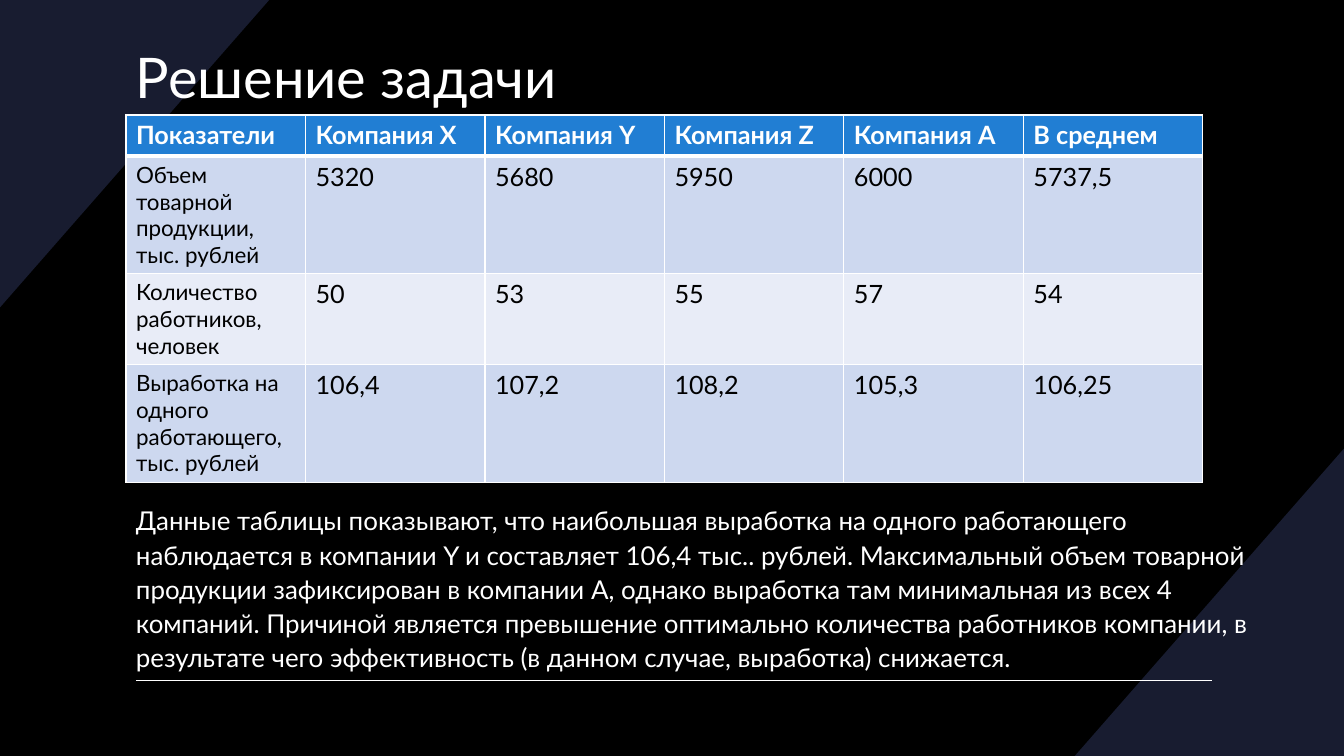
"""Build the "Решение задачи" slide with its table of indicators and conclusion."""
from dataclasses import dataclass

from lxml.etree import SubElement
from pptx import Presentation
from pptx.dml.color import RGBColor
from pptx.enum.shapes import MSO_CONNECTOR as Connector
from pptx.enum.text import MSO_ANCHOR as Anchor
from pptx.oxml.ns import qn
from pptx.util import Inches, Pt

FONT = "Lato"
COLORS = {
    "background": "000000",
    "corner": "181C30",
    "light": "FFFFFF",
    "dark": "000000",
    "header": "217ED3",
    "odd_row": "CDD8EF",
    "even_row": "E8ECF7",
}
WIDTH, HEIGHT = 13.33, 7.5
CORNER_WIDTH, CORNER_HEIGHT = 2.67, 3.05
COLUMN_WIDTH = 1.78
THIN, THICK = 1, 3


@dataclass
class Corner:
    points: list[tuple[float, float]]


@dataclass
class TextBlock:
    text: str
    left: float
    top: float
    width: float
    height: float
    size: float
    anchor: Anchor = Anchor.TOP
    line_spacing: float = 1.0
    space_before: float = 0


@dataclass
class TableRow:
    height: float
    fill: str
    values: list[str]
    label_size: float = 16
    color: str = "dark"
    bold: bool = False
    top_border: int = THIN
    bottom_border: int = THIN


CORNERS = [
    Corner([(WIDTH, HEIGHT - CORNER_HEIGHT), (WIDTH, HEIGHT), (WIDTH - CORNER_WIDTH, HEIGHT)]),
    Corner([(0, CORNER_HEIGHT), (0, 0), (CORNER_WIDTH, 0)]),
]
TEXT_BLOCKS = [
    TextBlock("Решение задачи", 1.25, 0.01, 10.83, 1.49, 40, anchor=Anchor.MIDDLE),
    TextBlock(
        "Данные таблицы показывают, что наибольшая выработка на одного работающего "
        "наблюдается в компании Y и составляет 106,4 тыс.. рублей. Максимальный объем "
        "товарной продукции зафиксирован в компании A, однако выработка там минимальная "
        "из всех 4 компаний. Причиной является превышение оптимально количества "
        "работников компании, в результате чего эффективность (в данном случае, "
        "выработка) снижается.",
        1.25, 4.93, 11.51, 1.97, 18.5, line_spacing=1.1, space_before=10,
    ),
]
TABLE_ROWS = [
    TableRow(
        0.41, "header",
        ["Показатели", "Компания X", "Компания Y", "Компания Z", "Компания А", "В среднем"],
        label_size=18, color="light", bold=True, bottom_border=THICK,
    ),
    TableRow(
        1.16, "odd_row",
        ["Объем товарной продукции, тыс. рублей", "5320", "5680", "5950", "6000", "5737,5"],
        top_border=THICK,
    ),
    TableRow(0.9, "even_row", ["Количество работников, человек", "50", "53", "55", "57", "54"]),
    TableRow(
        1.16, "odd_row",
        ["Выработка на одного работающего, тыс. рублей",
         "106,4", "107,2", "108,2", "105,3", "106,25"],
    ),
]


def rgb(name: str) -> RGBColor:
    return RGBColor.from_string(COLORS[name])


def format_runs(paragraph, size: float, color: str, bold: bool = False) -> None:
    for run in paragraph.runs:
        run.font.name = FONT
        run.font.size = Pt(size)
        run.font.bold = bold
        run.font.color.rgb = rgb(color)


def draw_corner(slide, corner: Corner) -> None:
    start, *others = [(Inches(x), Inches(y)) for x, y in corner.points]
    builder = slide.shapes.build_freeform(*start)
    builder.add_line_segments(others, close=True)
    shape = builder.convert_to_shape()
    shape.shadow.inherit = False
    shape.fill.solid()
    shape.fill.fore_color.rgb = rgb("corner")
    shape.line.fill.background()


def draw_footer_line(slide) -> None:
    line = slide.shapes.add_connector(
        Connector.STRAIGHT, Inches(1.35), Inches(6.75), Inches(12.02), Inches(6.75)
    )
    line.line.color.rgb = rgb("light")
    line.line.width = Pt(1)
    SubElement(line._element.spPr, qn("a:effectLst"))


def draw_text(slide, block: TextBlock) -> None:
    shape = slide.shapes.add_textbox(
        Inches(block.left), Inches(block.top), Inches(block.width), Inches(block.height)
    )
    text_frame = shape.text_frame
    text_frame.word_wrap = True
    text_frame.vertical_anchor = block.anchor
    text_frame.text = block.text
    paragraph = text_frame.paragraphs[0]
    paragraph.line_spacing = block.line_spacing
    paragraph.space_before = Pt(block.space_before)
    format_runs(paragraph, block.size, "light")


def set_borders(cell, row: TableRow) -> None:
    properties = cell._tc.get_or_add_tcPr()
    widths = {"lnL": THIN, "lnR": THIN, "lnT": row.top_border, "lnB": row.bottom_border}
    for index, (side, width) in enumerate(widths.items()):
        border = SubElement(properties, qn(f"a:{side}"), w=str(Pt(width)))
        fill = SubElement(border, qn("a:solidFill"))
        SubElement(fill, qn("a:srgbClr"), val=COLORS["light"])
        properties.insert(index, border)


def draw_table(slide, rows: list[TableRow]) -> None:
    column_count = len(rows[0].values)
    table = slide.shapes.add_table(
        len(rows), column_count, Inches(1.25), Inches(1.14),
        Inches(COLUMN_WIDTH * column_count), Inches(sum(row.height for row in rows)),
    ).table
    for column in table.columns:
        column.width = Inches(COLUMN_WIDTH)
    for row_index, row in enumerate(rows):
        table.rows[row_index].height = Inches(row.height)
        for column_index, value in enumerate(row.values):
            cell = table.cell(row_index, column_index)
            cell.fill.solid()
            cell.fill.fore_color.rgb = rgb(row.fill)
            cell.text_frame.text = value
            size = 18 if column_index else row.label_size
            format_runs(cell.text_frame.paragraphs[0], size, row.color, row.bold)
            set_borders(cell, row)


def main() -> None:
    presentation = Presentation()
    presentation.slide_width = Inches(WIDTH)
    presentation.slide_height = Inches(HEIGHT)
    slide = presentation.slides.add_slide(presentation.slide_layouts[6])
    slide.background.fill.solid()
    slide.background.fill.fore_color.rgb = rgb("background")
    for corner in CORNERS:
        draw_corner(slide, corner)
    draw_footer_line(slide)
    for block in TEXT_BLOCKS:
        draw_text(slide, block)
    draw_table(slide, TABLE_ROWS)
    presentation.save("out.pptx")


if __name__ == "__main__":
    main()
